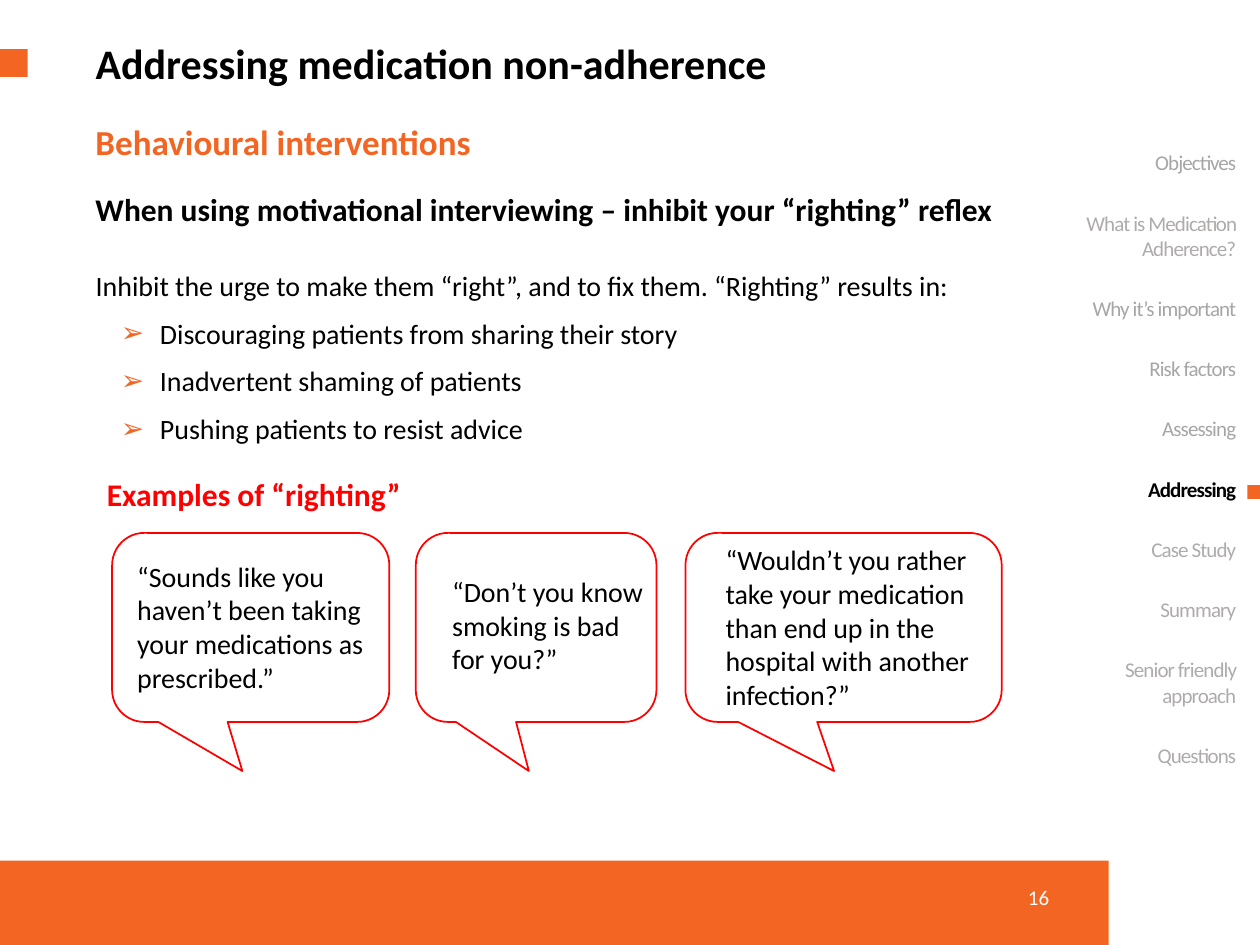
from dataclasses import dataclass
from typing import NamedTuple

import lxml.etree
import pptx
import pptx.dml.color
import pptx.enum.shapes
import pptx.enum.text
import pptx.oxml.ns
import pptx.util

COLUMNS, ROWS = 100, 75
ALIGN = pptx.enum.text.PP_ALIGN
ANCHOR = pptx.enum.text.MSO_ANCHOR
SHAPE = pptx.enum.shapes.MSO_SHAPE


@dataclass(frozen=True)
class Theme:
    font: str = "Calibri"
    accent: str = "F26523"
    alert: str = "FF0000"
    ink: str = "000000"
    paper: str = "FFFFFF"
    muted: str = "A6A6A6"
    muted_warm: str = "AFABAB"
    title_size: int = 24
    subtitle_size: int = 20
    heading_size: int = 18
    body_size: int = 16
    small_size: int = 12


class Box(NamedTuple):
    """Place on the grid, in columns and rows."""
    left: float
    top: float
    width: float
    height: float


class Style(NamedTuple):
    size: int
    color: str
    bold: bool = False


class Heading(NamedTuple):
    text: str
    box: Box
    style: Style


class Bubble(NamedTuple):
    quote: str
    left: float
    width: float
    text_box: Box


class MenuItem(NamedTuple):
    text: str
    color: str
    bold: bool = False


THEME = Theme()
BODY = Style(THEME.body_size, THEME.ink)
TITLE = Heading("Addressing medication non-adherence", Box(6.6, 2.9, 67.9, 4),
                Style(THEME.title_size, THEME.ink, True))
LABELS = [
    Heading("Behavioural interventions", Box(6.6, 9.1, 78.7, 4.4),
            Style(THEME.subtitle_size, THEME.accent, True)),
    Heading("When using motivational interviewing – inhibit your “righting” reflex",
            Box(6.6, 14.6, 74.3, 4), Style(THEME.heading_size, THEME.ink, True)),
    Heading("Examples of “righting”", Box(7.5, 37.2, 35, 4),
            Style(THEME.heading_size, THEME.alert, True)),
    Heading("16", Box(80.6, 69.7, 5.2, 4), Style(THEME.small_size, THEME.paper)),
]
BLOCKS = [Box(0, 3.9, 2.2, 2.2), Box(0, 68.3, 88, 6.7), Box(99, 38.5, 1, 1.1)]
BODY_BOX = Box(6.6, 21.1, 70.6, 18.6)
INTRODUCTION = "Inhibit the urge to make them “right”, and to fix them. “Righting” results in:"
RESULTS = [
    "Discouraging patients from sharing their story",
    "Inadvertent shaming of patients",
    "Pushing patients to resist advice",
]
BUBBLE_TOP, BUBBLE_HEIGHT = 42.3, 15
BUBBLES = [
    Bubble("“Sounds like you haven’t been taking your medications as prescribed.”",
           8.9, 22, Box(9.9, 43.9, 20.1, 12)),
    Bubble("“Don’t you know smoking is bad for you?”",
           33, 19.1, Box(34.9, 45.1, 17.4, 9.1)),
    Bubble("“Wouldn’t you rather take your medication than end up in the hospital "
           "with another infection?”", 54.4, 25.1, Box(56.6, 42.6, 22.9, 14.7)),
]
MENU_BOX = Box(84, 11.4, 15.1, 50.5)
MENU = [
    MenuItem("Objectives", THEME.muted),
    MenuItem("What is Medication Adherence?", THEME.muted_warm),
    MenuItem("Why it’s important", THEME.muted),
    MenuItem("Risk factors", THEME.muted),
    MenuItem("Assessing", THEME.muted),
    MenuItem("Addressing", THEME.ink, True),
    MenuItem("Case Study", THEME.muted_warm),
    MenuItem("Summary", THEME.muted_warm),
    MenuItem("Senior friendly approach", THEME.muted_warm),
    MenuItem("Questions", THEME.muted_warm),
]


def set_values(target, **values) -> None:
    for name, value in values.items():
        setattr(target, name, value)


def rgb(color: str) -> pptx.dml.color.RGBColor:
    return pptx.dml.color.RGBColor.from_string(color)


def place(box: Box, presentation) -> dict[str, int]:
    column = presentation.slide_width / COLUMNS
    row = presentation.slide_height / ROWS
    return dict(left=round(box.left * column), top=round(box.top * row),
                width=round(box.width * column), height=round(box.height * row))


def write(paragraph, text: str, style: Style, **layout):
    set_values(paragraph, **layout)
    run = paragraph.add_run()
    run.text = text
    set_values(run.font, name=THEME.font, size=pptx.util.Pt(style.size), bold=style.bold)
    run.font.color.rgb = rgb(style.color)
    return run


def set_bullet(paragraph, character: str | None = None) -> None:
    """Give the paragraph a hanging bullet, or take the inherited one away."""
    properties = paragraph._p.get_or_add_pPr()
    margin, indent = (0.51, -0.31) if character else (0, 0)
    properties.set("marL", str(pptx.util.Inches(margin)))
    properties.set("indent", str(pptx.util.Inches(indent)))
    name = pptx.oxml.ns.qn
    if character is None:
        lxml.etree.SubElement(properties, name("a:buNone"))
        return
    color = lxml.etree.SubElement(properties, name("a:buClr"))
    lxml.etree.SubElement(color, name("a:srgbClr"), val=THEME.accent)
    lxml.etree.SubElement(properties, name("a:buChar"), char=character)


def prepare_frame(shape, anchor=ANCHOR.TOP):
    frame = shape.text_frame
    set_values(frame, word_wrap=True, vertical_anchor=anchor,
               auto_size=pptx.enum.text.MSO_AUTO_SIZE.NONE)
    return frame


def paragraph_at(frame, index: int):
    return frame.add_paragraph() if index else frame.paragraphs[0]


def add_shape(slide, presentation, kind, box: Box, fill: str, line: str | None = None):
    shape = slide.shapes.add_shape(kind, **place(box, presentation))
    shape.shadow.inherit = False
    shape.fill.solid()
    shape.fill.fore_color.rgb = rgb(fill)
    if line is None:
        shape.line.fill.background()
    else:
        shape.line.color.rgb = rgb(line)
        shape.line.width = pptx.util.Pt(1)
    return shape


def add_label(slide, presentation, text: str, box: Box, style: Style) -> None:
    label = slide.shapes.add_textbox(**place(box, presentation))
    write(prepare_frame(label).paragraphs[0], text, style)


def fill_title(slide, presentation) -> None:
    title = slide.shapes.title
    set_values(title, **place(TITLE.box, presentation))
    write(prepare_frame(title).paragraphs[0], TITLE.text, TITLE.style,
          alignment=ALIGN.LEFT, line_spacing=0.9)


def fill_body(slide, presentation) -> None:
    body = slide.placeholders[1]
    set_values(body, **place(BODY_BOX, presentation))
    frame = prepare_frame(body)
    for index, text in enumerate([INTRODUCTION, *RESULTS]):
        paragraph = paragraph_at(frame, index)
        set_bullet(paragraph, "➢" if index else None)
        write(paragraph, text, BODY, line_spacing=0.9,
              space_before=pptx.util.Pt(10 if index else 0))


def add_menu(slide, presentation) -> None:
    frame = prepare_frame(slide.shapes.add_textbox(**place(MENU_BOX, presentation)))
    for index, item in enumerate(MENU):
        run = write(paragraph_at(frame, index), item.text,
                    Style(THEME.small_size, item.color, item.bold),
                    alignment=ALIGN.RIGHT, space_after=pptx.util.Pt(20))
        run._r.get_or_add_rPr().set("spc", "-50")


def add_bubble(slide, presentation, bubble: Bubble) -> None:
    box = Box(bubble.left, BUBBLE_TOP, bubble.width, BUBBLE_HEIGHT)
    callout = add_shape(slide, presentation, SHAPE.ROUNDED_RECTANGULAR_CALLOUT,
                        box, THEME.paper, THEME.alert)
    for index, value in enumerate((-0.03, 0.76, 0.17)):
        callout.adjustments[index] = value
    add_label(slide, presentation, bubble.quote, bubble.text_box, BODY)


def main() -> None:
    presentation = pptx.Presentation()
    set_values(presentation, slide_width=pptx.util.Inches(10),
               slide_height=pptx.util.Inches(7.5))
    slide = presentation.slides.add_slide(presentation.slide_layouts[1])
    for block in BLOCKS:
        add_shape(slide, presentation, SHAPE.RECTANGLE, block, THEME.accent)
    fill_title(slide, presentation)
    fill_body(slide, presentation)
    add_menu(slide, presentation)
    for bubble in BUBBLES:
        add_bubble(slide, presentation, bubble)
    for label in LABELS:
        add_label(slide, presentation, *label)
    presentation.save("out.pptx")


if __name__ == "__main__":
    main()
